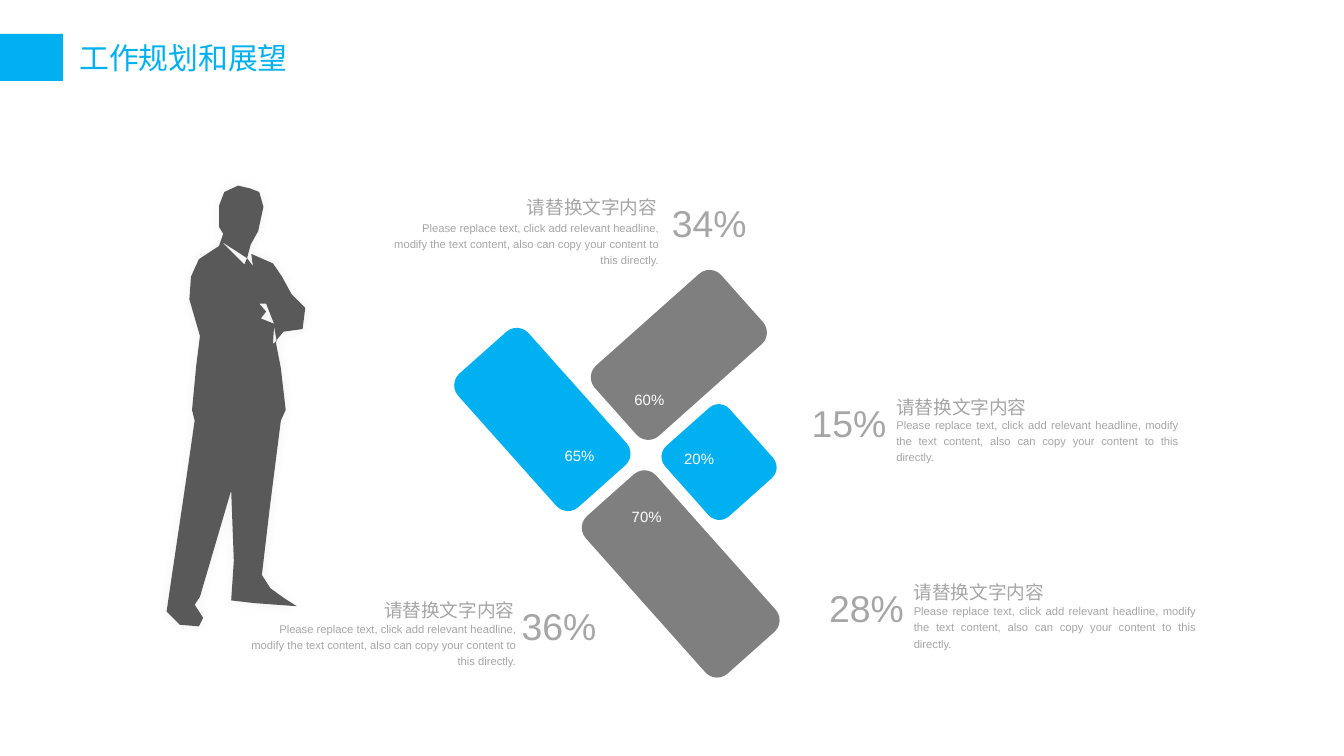
from lxml import etree
from pptx import Presentation
from pptx.dml.color import RGBColor
from pptx.enum.shapes import MSO_SHAPE
from pptx.enum.text import MSO_ANCHOR, MSO_AUTO_SIZE, PP_ALIGN
from pptx.oxml.ns import qn
from pptx.util import Cm, Pt

RECTANGLE, ROUNDED = MSO_SHAPE.RECTANGLE, MSO_SHAPE.ROUNDED_RECTANGLE
LEFT, RIGHT, JUSTIFY = PP_ALIGN.LEFT, PP_ALIGN.RIGHT, PP_ALIGN.JUSTIFY
FIT_SHAPE, MIDDLE = MSO_AUTO_SIZE.SHAPE_TO_FIT_TEXT, MSO_ANCHOR.MIDDLE

COLORS = {"blue": "00B0F0", "gray": "7F7F7F", "text": "A6A6A6",
          "figure": "595959", "white": "FFFFFF", "shadow": "000000"}
TITLE_FONT, BODY_FONT = "Noto Sans CJK SC", "Arial"
HEADING = "请替换文字内容"
BODY = ("Please replace text, click add relevant headline, modify the text "
        "content, also can copy your content to this directly.")
BAR_ANGLE = 48.3

# Bars: left, top, width, height in cm, colour
BARS = [
    (8.56, 7.04, 3.38, 1.78, "blue"),
    (10.87, 9.96, 3.99, 1.78, "gray"),
    (11.94, 5.11, 1.78, 3.2, "gray"),
    (12.7, 7.92, 1.78, 1.63, "blue"),
]
# Bar labels: text, left, top in cm
BAR_LABELS = [("65%", 10.49, 8.28), ("70%", 11.76, 9.42),
              ("20%", 12.75, 8.33), ("60%", 11.81, 7.21)]
# Callouts: number, number left, heading left, top, body offset in cm, side
CALLOUTS = [
    ("15%", 15.34, 16.94, 7.39, 0.46, JUSTIFY),
    ("34%", 12.7, 9.96, 3.61, 0.53, RIGHT),
    ("28%", 15.67, 17.27, 10.9, 0.48, JUSTIFY),
    ("36%", 9.86, 7.26, 11.23, 0.48, RIGHT),
]

# Standing figure: corner points in cm
FIGURE = [
    # Right arm, collar and head
    (5.77, 5.82), (5.51, 5.56), (5.33, 5.23), (5.16, 4.98), (4.75, 4.8),
    (4.78, 5.03), (4.67, 4.88), (4.62, 5), (4.19, 4.57), (4.67, 4.88),
    (4.74, 4.62), (4.88, 4.37), (4.98, 3.91), (4.9, 3.63), (4.72, 3.56),
    (4.5, 3.51), (4.24, 3.63), (4.14, 3.89), (4.14, 4.29), (4.22, 4.42),
    # Left shoulder, jacket and leg
    (4.14, 4.65), (3.76, 4.9), (3.61, 5.23), (3.58, 5.66), (3.78, 6.35),
    (3.71, 6.91), (3.63, 7.75), (3.68, 7.95), (3.53, 8.99), (3.18, 11.35),
    (3.15, 11.56), (3.4, 11.81), (3.76, 11.84), (3.84, 11.68), (3.68, 11.43),
    # Right leg and jacket
    (3.78, 11.28), (4.37, 9.27), (4.42, 10.6), (4.37, 11.35), (4.8, 11.4),
    (5.61, 11.46), (5.36, 11.3), (5.11, 11.12), (4.95, 10.87), (5.1, 9.6),
    (5.31, 7.95), (5.4, 7.75), (5.31, 6.96), (5.21, 6.45), (5.36, 6.27),
    (5.72, 6.22),
]
HAND_GAP = [(4.93, 6.02), (5.03, 5.89), (4.9, 5.74), (5.03, 5.74), (5.18, 6.12)]
JACKET_GAP = [(5.16, 6.5), (5.18, 6.17), (5.23, 6.45)]


def rgb(name):
    return RGBColor.from_string(COLORS[name])


def set_values(target, values):
    for name, value in values.items():
        setattr(target, name, value)


def paint(shape, color):
    shape.shadow.inherit = False
    shape.fill.solid()
    shape.fill.fore_color.rgb = rgb(color)
    shape.line.fill.background()


def fill_text(shape, text, size, color, font=BODY_FONT, align=LEFT,
              spacing=1.2, insets=(0, 0), **frame_values):
    frame = shape.text_frame
    horizontal, vertical = (Cm(inset) for inset in insets)
    set_values(frame, {"margin_left": horizontal, "margin_right": horizontal,
                       "margin_top": vertical, "margin_bottom": vertical,
                       "auto_size": FIT_SHAPE, **frame_values})
    paragraph = frame.paragraphs[0]
    set_values(paragraph, {"alignment": align, "line_spacing": spacing})
    run = paragraph.add_run()
    run.text = text
    set_values(run.font, {"size": Pt(size), "name": font})
    run.font.color.rgb = rgb(color)
    return run


def add_text(slide, box, text, size, color, wrap=False, **values):
    shape = slide.shapes.add_textbox(*map(Cm, box))
    fill_text(shape, text, size, color, word_wrap=wrap, **values)


def add_box(slide, kind, box, color, rotation=0):
    shape = slide.shapes.add_shape(kind, *map(Cm, box))
    paint(shape, color)
    shape.rotation = rotation


def add_title(slide, text):
    title = slide.shapes.title
    set_values(title, {"left": Cm(1.3), "top": Cm(0.64),
                       "width": Cm(5.11), "height": Cm(0.89)})
    run = fill_text(title, text, 16, "blue", font=TITLE_FONT, spacing=1.0,
                    insets=(0.2, 0.1), word_wrap=True, vertical_anchor=MIDDLE)
    etree.SubElement(run.font._element, qn("a:ea"), typeface=TITLE_FONT)


def add_callout(slide, number, number_left, left, top, body_offset, side):
    add_text(slide, (left, top, 2.49, 0.51), HEADING, 10, "text")
    width = 5.11 if side == RIGHT else 5.33
    body_left = left + 2.49 - width if side == RIGHT else left
    add_text(slide, (body_left, top + body_offset, width, 0.91), BODY, 6,
             "text", wrap=True, align=side)
    add_text(slide, (number_left, top, 1.42, 1.02), number, 20, "text",
             align=JUSTIFY)


def add_figure(slide):
    builder = None
    for outline in (FIGURE, HAND_GAP, JACKET_GAP):
        start, *points = [(Cm(x), Cm(y)) for x, y in outline]
        if builder is None:
            builder = slide.shapes.build_freeform(*start)
        else:
            builder.move_to(*start)
        builder.add_line_segments(points, close=True)
    figure = builder.convert_to_shape()
    paint(figure, "figure")
    # Faint soft shadow around the figure
    effects = figure._element.spPr.find(qn("a:effectLst"))
    shadow = etree.SubElement(effects, qn("a:outerShdw"), blurRad=str(Pt(6)),
                              dist="0", dir="13500000", rotWithShape="0")
    color = etree.SubElement(shadow, qn("a:srgbClr"), val=COLORS["shadow"])
    etree.SubElement(color, qn("a:alpha"), val="6000")


def main():
    presentation = Presentation()
    set_values(presentation, {"slide_width": Cm(25.4), "slide_height": Cm(14.29)})
    slide = presentation.slides.add_slide(presentation.slide_layouts[5])

    # Title and its marker
    add_title(slide, "工作规划和展望")
    add_box(slide, RECTANGLE, (0, 0.64, 1.19, 0.89), "blue")

    # Slanted bars with their percentages
    for *box, color in BARS:
        add_box(slide, ROUNDED, box, color, BAR_ANGLE)
    for text, left, top in BAR_LABELS:
        add_text(slide, (left, top, 0.94, 0.58), text, 8, "white",
                 align=JUSTIFY, insets=(0.18, 0.1))

    # Standing figure and callouts
    add_figure(slide)
    for callout in CALLOUTS:
        add_callout(slide, *callout)

    presentation.save("out.pptx")


if __name__ == "__main__":
    main()
